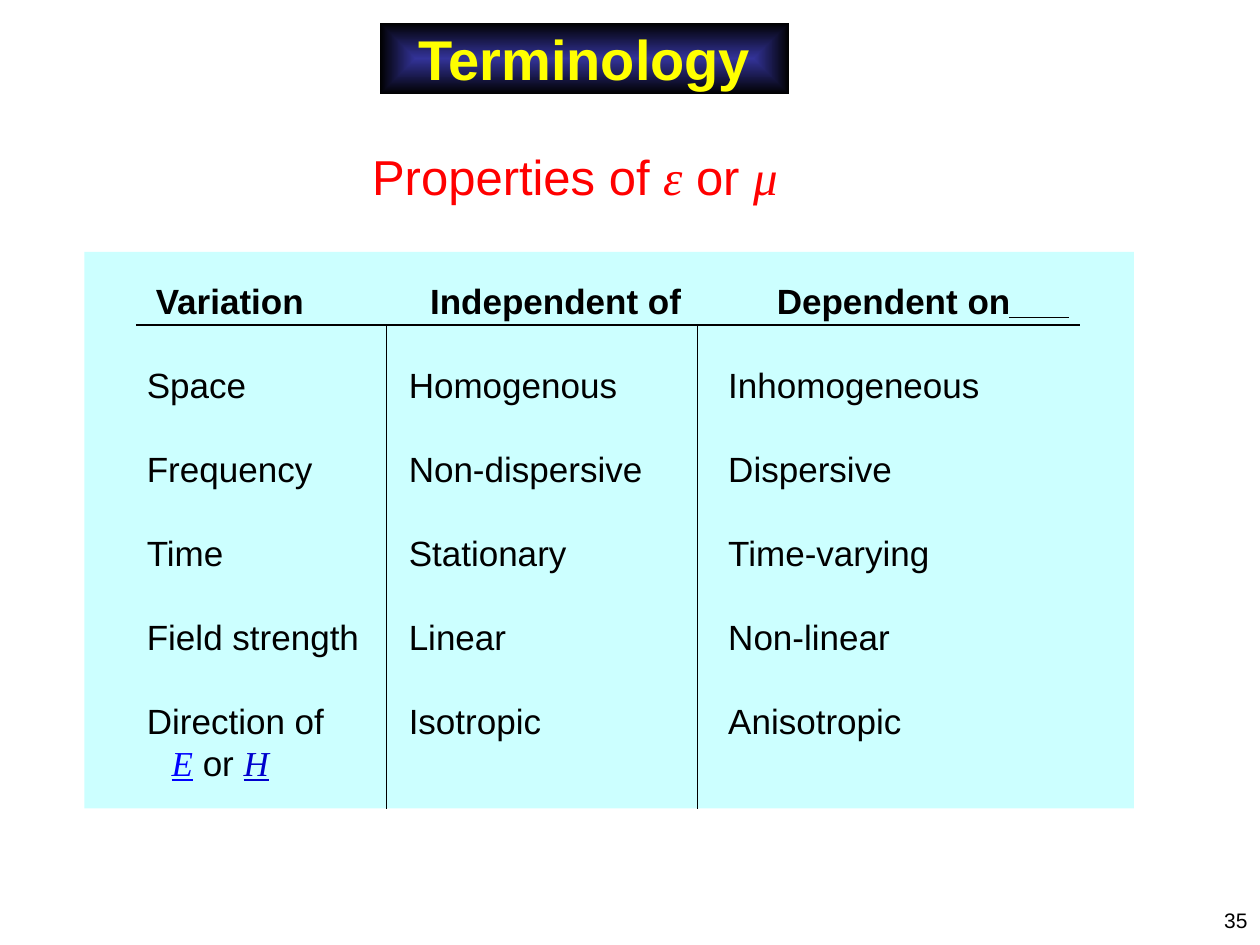
from lxml import etree
from pptx import Presentation
from pptx.dml.color import RGBColor
from pptx.enum.shapes import MSO_CONNECTOR, MSO_SHAPE
from pptx.enum.text import MSO_ANCHOR, PP_ALIGN
from pptx.oxml.ns import qn
from pptx.util import Cm, Pt

LEFT, CENTER, RIGHT = PP_ALIGN.LEFT, PP_ALIGN.CENTER, PP_ALIGN.RIGHT
TOP, MIDDLE = MSO_ANCHOR.TOP, MSO_ANCHOR.MIDDLE
RECT = MSO_SHAPE.RECTANGLE
STRAIGHT = MSO_CONNECTOR.STRAIGHT

BLACK = "000000"
SERIF = {"font": "Times New Roman", "italic": True}

COL_WIDTHS = [5.05, 6.27, 7.72]
HEADER_H, ROW_H, LAST_ROW_H = 1.04, 1.69, 2.97
HEADER_INSETS = [0.4, 0.88, 1.6]
BODY_INSETS = [0.22, 0.45, 0.62]
HEADER = ["Variation", "Independent of", "Dependent on"]
BODY = [
    ["Space", "Homogenous", "Inhomogeneous"],
    ["Frequency", "Non-dispersive", "Dispersive"],
    ["Time", "Stationary", "Time-varying"],
    ["Field strength", "Linear", "Non-linear"],
    ["Direction of", "Isotropic", "Anisotropic"],
]
FIELDS = [("E", {**SERIF, "color": "0000FF", "underline": True}), " or ",
          ("H", {**SERIF, "color": "0000CC", "underline": True})]


def rgb(value):
    return RGBColor.from_string(value)


def add_text(p, text, size=20, font="Arial", color=BLACK, bold=False,
             italic=False, underline=False):
    r = p.add_run()
    r.text = text
    f = r.font
    f.size, f.name, f.bold, f.italic = Pt(size), font, bold, italic
    f.underline = underline
    f.color.rgb = rgb(color)


def add_runs(p, runs, align=LEFT, **fmt):
    """Fill a paragraph; a run is a string or a (string, format) pair."""
    p.alignment = align
    for run in runs:
        text, own = (run, {}) if isinstance(run, str) else run
        add_text(p, text, **{**fmt, **own})


def add_box(s, box, runs, anchor=TOP, **fmt):
    tf = s.shapes.add_textbox(*map(Cm, box)).text_frame
    tf.word_wrap = True
    tf.vertical_anchor = anchor
    add_runs(tf.paragraphs[0], runs, **fmt)


def add_rect(s, box):
    sp = s.shapes.add_shape(RECT, *map(Cm, box))
    sp.shadow.inherit = False
    sp.line.fill.background()
    return sp


def add_line(s, x1, y1, x2, y2):
    c = s.shapes.add_connector(STRAIGHT, Cm(x1), Cm(y1), Cm(x2), Cm(y2))
    c.line.color.rgb = rgb(BLACK)
    c.line.width = Pt(0.75)
    etree.SubElement(c._element.spPr, qn("a:effectLst"))


def add_banner(s, box, text):
    sp = add_rect(s, box)
    # Gradient that runs from the centre to the edges
    sp.fill.gradient()
    for stop, color, pos in zip(sp.fill.gradient_stops, ("333399", BLACK), (0, 1)):
        stop.color.rgb = rgb(color)
        stop.position = pos
    grad = sp._element.spPr.find(qn("a:gradFill"))
    grad.remove(grad.find(qn("a:lin")))
    shade = etree.SubElement(grad, qn("a:path"), {"path": "shape"})
    centre = dict.fromkeys("ltrb", "50000")
    etree.SubElement(shade, qn("a:fillToRect"), centre)

    tf = sp.text_frame
    tf.vertical_anchor = MIDDLE
    add_runs(tf.paragraphs[0], [text], CENTER, size=32, color="FFFF00", bold=True)


def clear_borders(cell):
    tc_pr = cell._tc.get_or_add_tcPr()
    for i, side in enumerate("LRTB"):
        ln = etree.Element(qn("a:ln" + side))
        etree.SubElement(ln, qn("a:noFill"))
        tc_pr.insert(i, ln)


def add_terms(s, box):
    left, top, width, height = box
    panel = add_rect(s, box)
    panel.fill.solid()
    panel.fill.fore_color.rgb = rgb("CCFFFF")

    # Table, inset in the panel
    heights = [HEADER_H] + [ROW_H] * (len(BODY) - 1) + [LAST_ROW_H]
    x, y = left + 1.04, top + 0.43
    frame = s.shapes.add_table(len(heights), len(COL_WIDTHS), Cm(x), Cm(y),
                               Cm(sum(COL_WIDTHS)), Cm(sum(heights)))
    table = frame.table
    table.first_row = table.horz_banding = False
    for column, w in zip(table.columns, COL_WIDTHS):
        column.width = Cm(w)
    for row, h in zip(table.rows, heights):
        row.height = Cm(h)

    for i, texts in enumerate([HEADER] + BODY):
        head = i == 0
        for j, text in enumerate(texts):
            cell = table.cell(i, j)
            cell.fill.background()
            cell.margin_left = Cm((HEADER_INSETS if head else BODY_INSETS)[j])
            cell.margin_top = Cm(0.19 if head else 0.85)
            cell.margin_right = cell.margin_bottom = 0
            add_runs(cell.text_frame.paragraphs[0], [text], bold=head)
            clear_borders(cell)

    # Second, indented line of the last row label
    p = table.cell(len(BODY), 0).text_frame.add_paragraph()
    p._p.get_or_add_pPr().set("marL", str(Cm(0.5)))
    p.space_before = Pt(1.7)
    add_runs(p, FIELDS)

    # Rules under the header and between the columns
    rule_y = y + HEADER_H
    add_line(s, x, rule_y, x + sum(COL_WIDTHS), rule_y)
    for j in range(1, len(COL_WIDTHS)):
        rule_x = x + sum(COL_WIDTHS[:j])
        add_line(s, rule_x, rule_y, rule_x, top + height)

    # Blank to fill in after "Dependent on"
    add_line(s, left + 18.65, top + 1.32, left + 19.84, top + 1.32)


def main():
    prs = Presentation()
    prs.slide_width, prs.slide_height = Cm(25.4), Cm(19.05)
    s = prs.slides.add_slide(prs.slide_layouts[6])

    add_terms(s, (1.7, 5.08, 21.16, 11.22))
    add_banner(s, (7.66, 0.46, 8.25, 1.44), "Terminology")
    add_box(s, (7.08, 2.82, 9.02, 1.45),
            ["Properties of ", ("ε", SERIF), " or ", ("μ", SERIF)],
            align=CENTER, size=28, color="FF0000")
    # Slide number
    add_box(s, (19.48, 18.03, 5.92, 1.02), ["35"], MIDDLE, align=RIGHT, size=12)

    prs.save("out.pptx")


if __name__ == "__main__":
    main()
